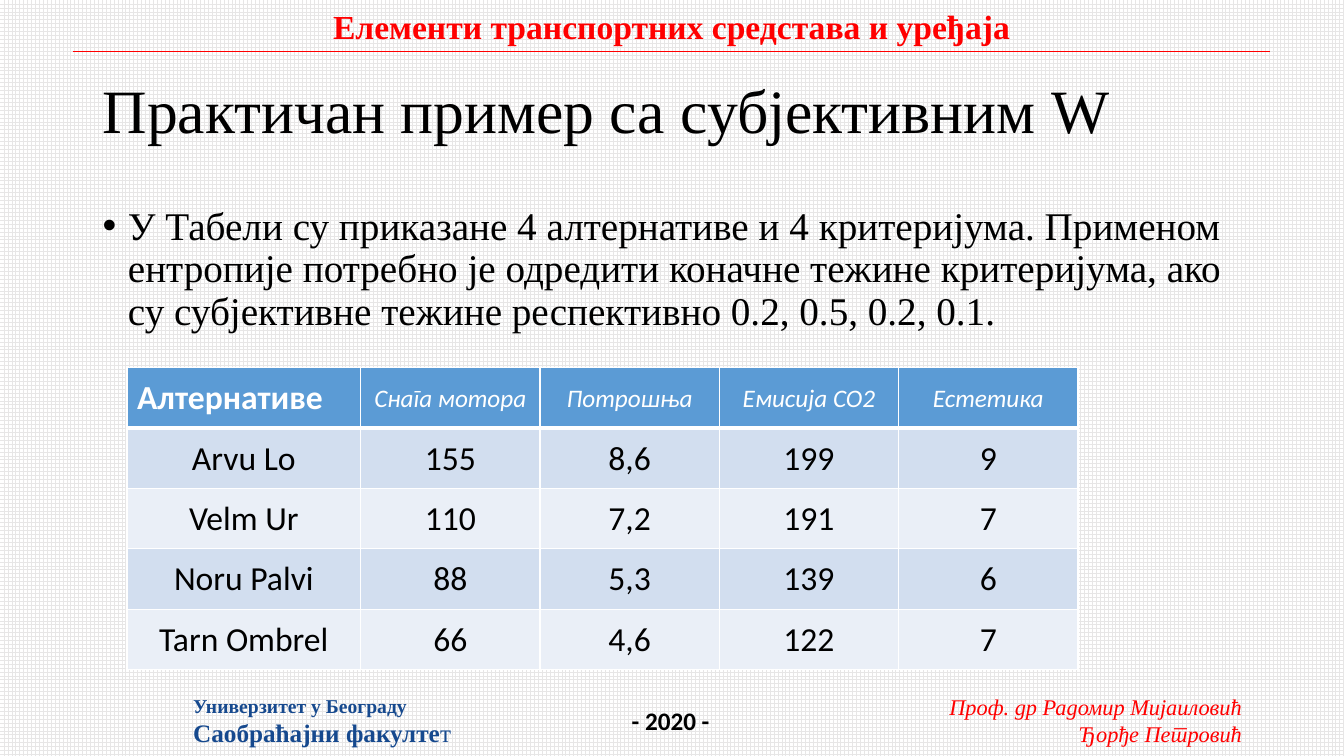
"""Build the slide with the subjective-weights example and its table of alternatives."""
from lxml import etree
from pptx import Presentation
from pptx.dml.color import RGBColor
from pptx.enum.dml import MSO_PATTERN
from pptx.enum.shapes import MSO_CONNECTOR
from pptx.enum.text import MSO_ANCHOR, MSO_AUTO_SIZE, PP_ALIGN
from pptx.oxml import parse_xml
from pptx.oxml.ns import nsdecls, qn
from pptx.util import Cm, Pt

LEFT, CENTER, RIGHT = PP_ALIGN.LEFT, PP_ALIGN.CENTER, PP_ALIGN.RIGHT
MIDDLE, TOP = MSO_ANCHOR.MIDDLE, MSO_ANCHOR.TOP
NO_FIT, GROW = MSO_AUTO_SIZE.NONE, MSO_AUTO_SIZE.SHAPE_TO_FIT_TEXT
LARGE_GRID = MSO_PATTERN.LARGE_GRID
STRAIGHT = MSO_CONNECTOR.STRAIGHT
SERIF, SANS = "Times New Roman", "Calibri"
COLORS = {
    "black": "000000", "white": "FFFFFF", "red": "FF0000", "navy": "16498E",
    "grid": "E7E6E6", "header": "5B9BD5", "odd": "D2DEEF", "even": "EAEFF7",
}


def color(name):
    return RGBColor.from_string(COLORS[name])


def add_run(paragraph, text, ink, **formats):
    run = paragraph.add_run()
    run.text = text
    run._r.get_or_add_rPr().set("lang", "sr-Cyrl-RS")
    run.font.color.rgb = color(ink)
    for attribute, value in formats.items():
        setattr(run.font, attribute, value)


deck = Presentation()
deck.slide_width, deck.slide_height = Cm(33.87), Cm(19.05)
slide = deck.slides.add_slide(deck.slide_layouts[1])
backdrop = slide.background.fill
backdrop.patterned()
backdrop.pattern = LARGE_GRID
backdrop.fore_color.rgb = color("grid")
backdrop.back_color.rgb = color("white")

header_rule = slide.shapes.add_connector(STRAIGHT, Cm(1.83), Cm(1.3), Cm(32), Cm(1.3))
header_rule.line.color.rgb = color("red")
header_rule.line.width = Pt(0.5)
etree.SubElement(header_rule._element.spPr, qn("a:effectLst"))

serif_bold = {"name": SERIF, "bold": True}
authors = {"name": SERIF, "italic": True, "size": Pt(16)}
captions = [
    ((23.42, 17.35, 8.13, 1.63), RIGHT, "red", [
        [("Проф. др Радомир Мијаиловић", authors)],
        [("Ђорђе Петровић", authors)]]),
    ((8.05, 0.03, 17.75, 1.27), CENTER, "red", [
        [("Елементи транспортних средстава и уређаја", {**serif_bold, "size": Pt(24)})]]),
    ((15.67, 17.65, 2.49, 1.02), LEFT, "black", [
        [("- 2020 -", {"name": SANS, "bold": True, "size": Pt(18)})]]),
    ((4.62, 17.35, 7.09, 1.63), LEFT, "navy", [
        [("Универзитет у Београду", {**serif_bold, "size": Pt(14)})],
        [("Саобраћајни факулте", {**serif_bold, "size": Pt(18)}),
         ("т", {"name": SERIF, "bold": False, "size": Pt(18)})]]),
]
for place, alignment, ink, lines in captions:
    caption = slide.shapes.add_textbox(*map(Cm, place)).text_frame
    caption.word_wrap = False
    caption.auto_size = GROW
    for index, runs in enumerate(lines):
        line = caption.add_paragraph() if index else caption.paragraphs[0]
        line.alignment = alignment
        for text, formats in runs:
            add_run(line, text, ink, **formats)

heading = slide.shapes.title
task = slide.placeholders[1]
contents = [
    (heading, (2.33, 1.02, 29.21, 3.68), MIDDLE, 44, "Практичан пример са субјективним W"),
    (task, (2.33, 5.08, 29.21, 12.09), TOP, 28,
     "У Табели су приказане 4 алтернативе и 4 критеријума. Применом ентропије "
     "потребно је одредити коначне тежине критеријума, ако су субјективне тежине "
     "респективно 0.2, 0.5, 0.2, 0.1."),
]
for holder, place, anchor, size, text in contents:
    holder.left, holder.top, holder.width, holder.height = map(Cm, place)
    frame = holder.text_frame
    frame.auto_size = NO_FIT
    frame.word_wrap = True
    frame.vertical_anchor = anchor
    paragraph = frame.paragraphs[0]
    paragraph.alignment = LEFT
    paragraph.line_spacing = 0.9
    paragraph.space_before = Pt(0)
    add_run(paragraph, text, "black", name=SERIF, size=Pt(size))

bullet = task.text_frame.paragraphs[0]._p.get_or_add_pPr()
bullet.set("marL", str(Cm(0.64)))
bullet.set("indent", str(-Cm(0.64)))
etree.SubElement(bullet, qn("a:buFont")).set("typeface", "Arial")
etree.SubElement(bullet, qn("a:buChar")).set("char", "•")

alternatives = [
    ("Алтернативе", "Снага мотора", "Потрошња", "Емисија CO2", "Естетика"),
    ("Arvu Lo", "155", "8,6", "199", "9"),
    ("Velm Ur", "110", "7,2", "191", "7"),
    ("Noru Palvi", "88", "5,3", "139", "6"),
    ("Tarn Ombrel", "66", "4,6", "122", "7"),
]
column_widths = [5.89] + [4.52] * 4
row_height = 1.52
table = slide.shapes.add_table(
    len(alternatives), len(column_widths), Cm(3.2), Cm(9.27),
    Cm(sum(column_widths)), Cm(row_height * len(alternatives))).table
table.horz_banding = False
for column, width in zip(table.columns, column_widths):
    column.width = Cm(width)

for r, values in enumerate(alternatives):
    table.rows[r].height = Cm(row_height)
    row_fill = "header" if r == 0 else "odd" if r % 2 else "even"
    for c, value in enumerate(values):
        cell = table.cell(r, c)
        corner, criterion = r == c == 0, r == 0 and c > 0
        cell.vertical_anchor = MIDDLE
        if not corner:
            cell.margin_left = cell.margin_right = cell.margin_top = Cm(0.02)
            cell.margin_bottom = 0
        borders = {"lnL": 1, "lnR": 1, "lnT": 3 if r == 1 else 1, "lnB": 3 if r == 0 else 1}
        for side, points in borders.items():
            cell._tc.get_or_add_tcPr().append(parse_xml(
                f'<a:{side} {nsdecls("a")} w="{Pt(points)}"><a:solidFill>'
                f'<a:srgbClr val="{COLORS["white"]}"/></a:solidFill></a:{side}>'))
        cell.fill.solid()
        cell.fill.fore_color.rgb = color(row_fill)
        entry = cell.text_frame.paragraphs[0]
        entry.alignment = LEFT if corner else CENTER
        add_run(entry, value, "black" if r else "white", name=SANS,
                size=Pt(18 if criterion else 24), bold=corner, italic=criterion)

deck.save("out.pptx")
